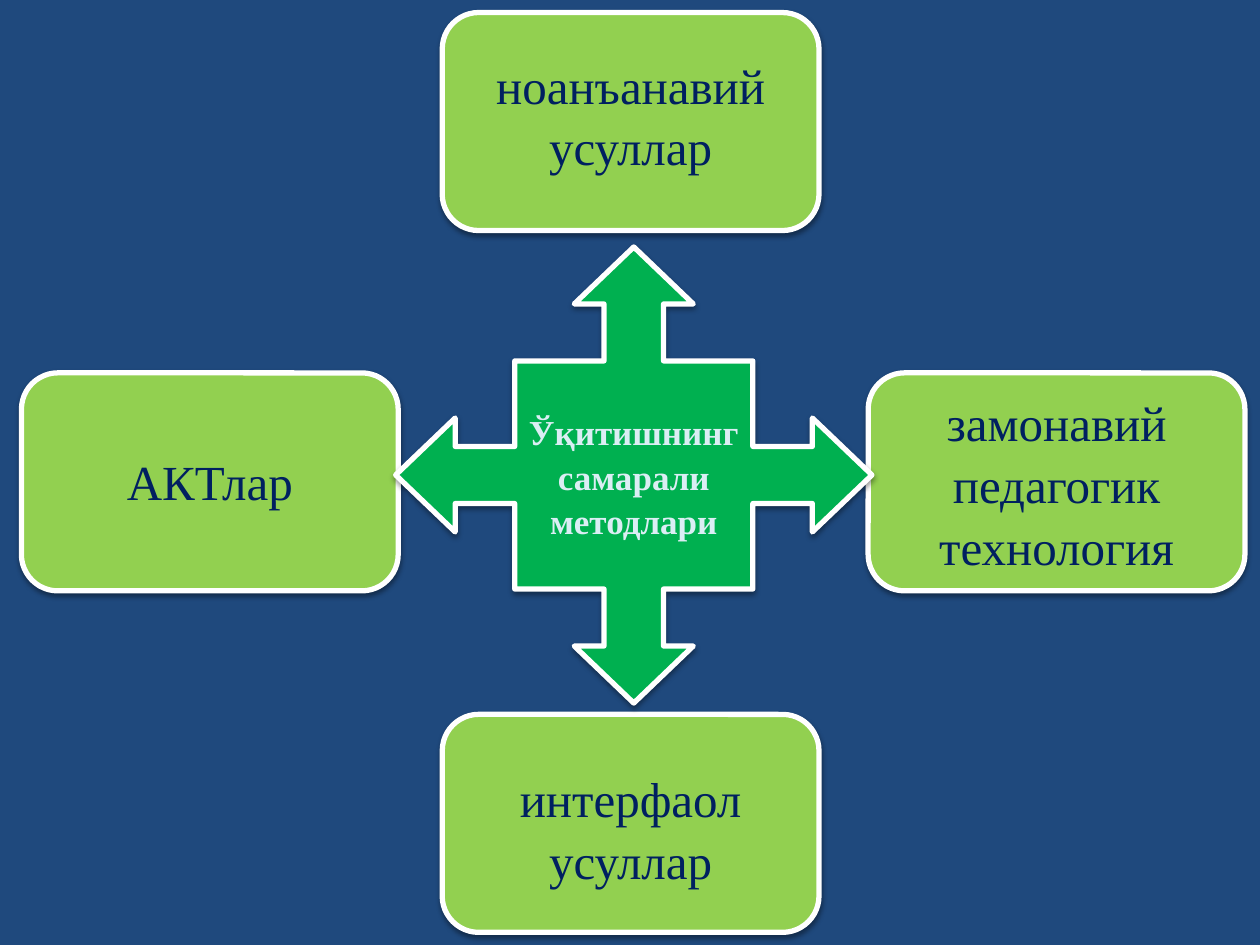
from lxml.etree import SubElement
from pptx import Presentation
from pptx.dml.color import RGBColor
from pptx.enum.shapes import MSO_SHAPE
from pptx.enum.text import MSO_ANCHOR, PP_ALIGN
from pptx.oxml.ns import qn
from pptx.util import Inches, Pt

NAVY = RGBColor(0x1F, 0x49, 0x7D)
LIME = RGBColor(0x92, 0xD0, 0x50)
GREEN = RGBColor(0x00, 0xB0, 0x50)
WHITE = RGBColor(0xFF, 0xFF, 0xFF)
INK = RGBColor(0x00, 0x20, 0x60)
PALE = RGBColor(0xDB, 0xEE, 0xF4)

CARD = (2.99, 1.73)
# Left, top, space above the text, text
CARDS = [
    (3.51, 0.10, 0.18, "ноанъанавий усуллар"),
    (6.89, 2.96, 0, "замонавий педагогик технология"),
    (3.51, 5.67, 0.27, "интерфаол усуллар"),
    (0.17, 2.96, 0.47, "АКТлар"),
]
CROSS = (3.14, 1.96, 3.78, 3.62)
# Upper arm of the cross on a grid of 8 by 8
ARM = [(2, 2), (3.5, 2), (3.5, 1), (3, 1), (4, 0), (5, 1), (4.5, 1), (4.5, 2)]


def apply(item, style):
    for name, value in style.items():
        setattr(item, name, value)


def paint(shape, fill):
    """Solid fill, white outline and a soft shadow below."""
    shape.fill.solid()
    shape.fill.fore_color.rgb = fill
    shape.line.color.rgb = WHITE
    shape.line.width = Pt(3)
    shape.shadow.inherit = False
    effects = shape._element.spPr.find(qn("a:effectLst"))
    shade = SubElement(effects, qn("a:outerShdw"), blurRad=str(Pt(3.1)),
                       dist=str(Pt(1.6)), dir="5400000", rotWithShape="0")
    color = SubElement(shade, qn("a:srgbClr"), val="000000")
    SubElement(color, qn("a:alpha"), val="38000")


def write(shape, text, frame, font):
    box = shape.text_frame
    apply(box, {"word_wrap": True, **frame})
    para = box.paragraphs[0]
    apply(para, {"alignment": PP_ALIGN.CENTER, "line_spacing": 1.05})
    run = para.add_run()
    run.text = text
    color = font.pop("color")
    apply(run.font, {"name": "Times New Roman", **font})
    run.font.color.rgb = color


def add_card(slide, left, top, width, height, space, text):
    card = slide.shapes.add_shape(
        MSO_SHAPE.ROUNDED_RECTANGLE,
        Inches(left), Inches(top), Inches(width), Inches(height))
    card.adjustments[0] = 0.167
    paint(card, LIME)
    frame = {"vertical_anchor": MSO_ANCHOR.TOP,
             "margin_top": Inches(0.05 + space)}
    write(card, text, frame, {"size": Pt(28), "color": INK})


def add_cross(slide, left, top, width, height, text):
    # Turn the arm about the middle of the grid
    points, arm = [], ARM
    for _ in range(4):
        points += arm
        arm = [(8 - y, x) for x, y in arm]
    spots = [(Inches(left + x * width / 8), Inches(top + y * height / 8))
             for x, y in points]
    path = slide.shapes.build_freeform(*spots[0])
    path.add_line_segments(spots[1:], close=True)
    cross = path.convert_to_shape()
    paint(cross, GREEN)

    # Keep the text inside the square body
    side, edge = Inches(width / 4), Inches(height / 4)
    frame = {"vertical_anchor": MSO_ANCHOR.MIDDLE,
             "margin_left": side, "margin_right": side,
             "margin_top": edge, "margin_bottom": edge}
    write(cross, text, frame, {"size": Pt(20), "bold": True, "color": PALE})


def main():
    deck = Presentation()
    apply(deck, {"slide_width": Inches(10), "slide_height": Inches(7.5)})
    slide = deck.slides.add_slide(deck.slide_layouts[6])
    slide.background.fill.solid()
    slide.background.fill.fore_color.rgb = NAVY

    for left, top, space, text in CARDS:
        add_card(slide, left, top, *CARD, space, text)
    add_cross(slide, *CROSS, "Ўқитишнинг самарали методлари")
    deck.save("out.pptx")


if __name__ == "__main__":
    main()
